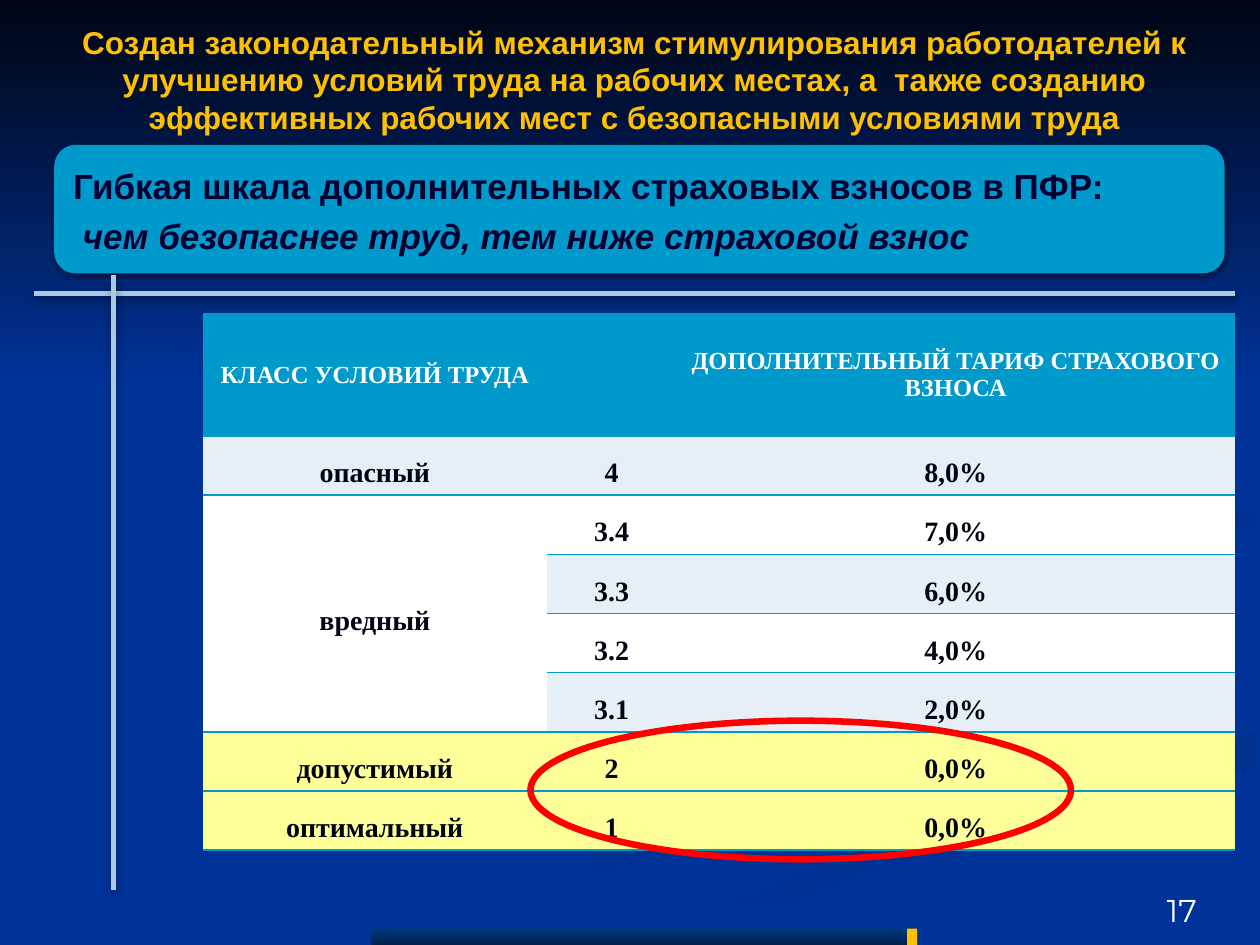
from lxml import etree
from pptx import Presentation
from pptx.dml.color import RGBColor
from pptx.enum.shapes import MSO_CONNECTOR, MSO_SHAPE
from pptx.enum.text import MSO_ANCHOR, PP_ALIGN
from pptx.oxml.ns import qn
from pptx.util import Emu, Inches, Pt

STRAIGHT = MSO_CONNECTOR.STRAIGHT
RECT, ROUNDED, OVAL = MSO_SHAPE.RECTANGLE, MSO_SHAPE.ROUNDED_RECTANGLE, MSO_SHAPE.OVAL
CENTER, LEFT = PP_ALIGN.CENTER, PP_ALIGN.LEFT
TOP, MIDDLE, BOTTOM = MSO_ANCHOR.TOP, MSO_ANCHOR.MIDDLE, MSO_ANCHOR.BOTTOM

WIDTH, HEIGHT = 10, 7.5
THEME = {
    "background": "003399", "night": "000514", "banner": "0099CC", "accent": "FFC000",
    "rule": "AACAE2", "ring": "FF0000", "band": "E7EFF6", "plain": "FFFFFF", "safe": "FFFF99",
    "title": dict(size=Pt(18), name="Arial", bold=True, color="FFC000"),
    "message": dict(size=Pt(20), name="Arial", bold=True, color="000030"),
    "header": dict(size=Pt(14), name="Times New Roman", bold=True, color="FFFFFF"),
    "body": dict(size=Pt(16), name="Times New Roman", bold=True, color="000514"),
    "number": dict(size=Pt(18), name="Montserrat", color="FFFFFF"),
}

TITLE = ("Создан законодательный механизм стимулирования работодателей к улучшению условий "
         "труда на рабочих местах, а  также созданию эффективных рабочих мест с безопасными "
         "условиями труда")
MESSAGE = [("Гибкая шкала дополнительных страховых взносов в ПФР:", False),
           (" чем безопаснее труд, тем ниже страховой взнос", True)]
PAGE = "17"
HEADER = ("КЛАСС УСЛОВИЙ ТРУДА", "", "ДОПОЛНИТЕЛЬНЫЙ ТАРИФ СТРАХОВОГО ВЗНОСА")
RATES = [  # class of conditions, [(subclass, rate, row tint)]
    ("опасный", [("4", "8,0%", "band")]),
    ("вредный", [("3.4", "7,0%", "plain"), ("3.3", "6,0%", "band"),
                 ("3.2", "4,0%", "plain"), ("3.1", "2,0%", "band")]),
    ("допустимый", [("2", "0,0%", "safe")]),
    ("оптимальный", [("1", "0,0%", "safe")]),
]
COLUMN_WIDTHS = (2.73, 1.03, 4.43)
HEADER_HEIGHT, ROW_HEIGHT = 0.97, 0.47

# Background ribbons: start colour, end colour, clockwise angle, outline
RIBBONS = [
    ("003399", "003193", 0,
     [(7.81, 5.53), (7.45, 5.38), (6.82, 5.19), (6.26, 5.02), (5.94, 4.85), (5.75, 4.66),
      (5.75, 4.59), (5.7, 4.72), (5.86, 4.87), (6.31, 5.05), (7.14, 5.3), (7.7, 5.51),
      (7.86, 5.66), (7.74, 5.83), (7.39, 5.98), (6.84, 6.13), (5.79, 6.39), (4.58, 6.74),
      (3.76, 7.07), (3, 7.49), (3.61, 7.49), (4.31, 7.14), (5.32, 6.74), (6.51, 6.4),
      (7.56, 6.14), (7.91, 5.97), (8, 5.81), (7.92, 5.61)]),
    ("003399", "003193", 45,
     [(9.43, 5.7), (9.3, 5.53), (8.88, 5.35), (8.11, 5.15), (7.58, 4.98), (7.3, 4.79),
      (7.24, 4.64), (7.3, 4.84), (7.55, 5.05), (8.15, 5.3), (8.8, 5.49), (9.11, 5.67),
      (9.18, 5.81), (9.07, 5.97), (8.94, 6.05), (9.25, 5.93), (9.41, 5.81)]),
    ("002F8C", "003399", 90,
     [(5.19, 7.47), (5.03, 7.49), (5.71, 7.49), (6.14, 7.26), (6.7, 7.02), (7.52, 6.72),
      (8.61, 6.4), (9.98, 6.09), (9.98, 5.81), (9.63, 5.94), (9.03, 6.1), (7.97, 6.38),
      (6.96, 6.69), (6.3, 6.93), (5.69, 7.19)]),
    ("003091", "003399", 45,
     [(7.81, 4.6), (7.86, 4.74), (8.06, 4.87), (8.26, 4.96), (8.09, 4.84), (8.05, 4.72),
      (8.16, 4.59), (8.59, 4.43), (9.36, 4.29), (9.98, 4.2), (9.98, 4.02), (9.33, 4.15),
      (8.65, 4.24), (8.1, 4.37)]),
    ("002F8E", "003399", 45,
     [(6.83, 4.3), (7.64, 4.17), (8.25, 4.02), (8.67, 3.84), (8.89, 3.62), (8.93, 3.35),
      (8.73, 2.99), (8.43, 2.75), (7.99, 2.5), (7.62, 2.33), (8.26, 2.66), (8.7, 2.99),
      (8.89, 3.35), (8.76, 3.6), (8.42, 3.78), (7.63, 3.98), (6.49, 4.2), (5.97, 4.37),
      (5.77, 4.62), (5.9, 4.84), (6.22, 5), (5.97, 4.8), (5.94, 4.65), (6.14, 4.48)]),
]


def inches(*values):
    return [Inches(v) for v in values]


def set_gradient(shape, colors, clockwise, opacities=()):
    shape.shadow.inherit = False
    shape.line.fill.background()
    shape.fill.gradient()
    shape.fill.gradient_angle = (360 - clockwise) % 360
    for stop, color in zip(shape.fill.gradient_stops, colors):
        stop.color.rgb = RGBColor.from_string(color)
    tints = shape.fill._xPr.iter(qn("a:srgbClr"))
    for tint, opacity in zip(tints, opacities):
        etree.SubElement(tint, qn("a:alpha"), val=str(opacity * 1000))


def set_shadow(properties, opacity, blur, distance):
    """Put a downward black shadow on an spPr element."""
    effects = properties.find(qn("a:effectLst"))
    if effects is None:
        effects = etree.SubElement(properties, qn("a:effectLst"))
    outer = etree.SubElement(effects, qn("a:outerShdw"), blurRad=str(Pt(blur)),
                             dist=str(Pt(distance)), dir="5400000", rotWithShape="0")
    black = etree.SubElement(outer, qn("a:srgbClr"), val="000000")
    etree.SubElement(black, qn("a:alpha"), val=str(opacity * 1000))


def add_block(shapes, kind, box, fill=None):
    block = shapes.add_shape(kind, *inches(*box))
    block.shadow.inherit = False
    block.line.fill.background()
    if fill:
        block.fill.solid()
        block.fill.fore_color.rgb = RGBColor.from_string(THEME[fill])
    else:
        block.fill.background()
    return block


def write(paragraph, text, style, italic=False, **layout):
    for key, value in layout.items():
        setattr(paragraph, key, value)
    run = paragraph.add_run()
    run.text = text
    for key, value in THEME[style].items():
        if key == "color":
            run.font.color.rgb = RGBColor.from_string(value)
        else:
            setattr(run.font, key, value)
    if italic:
        run.font.italic = True


def add_frame(shapes, box, anchor):
    frame = shapes.add_textbox(*inches(*box)).text_frame
    frame.word_wrap = True
    frame.vertical_anchor = anchor
    return frame


def fill_cell(cell, text, style, tint, spacing):
    cell.fill.solid()
    cell.fill.fore_color.rgb = RGBColor.from_string(THEME[tint])
    cell.vertical_anchor = MIDDLE
    cell.margin_left = cell.margin_right = Inches(0.07)
    cell.margin_top = cell.margin_bottom = 0
    if text:
        write(cell.text_frame.paragraphs[0], text, style, alignment=CENTER, line_spacing=spacing)
    for edge in ("a:lnB", "a:lnT"):
        border = etree.Element(qn(edge), w=str(Pt(1)))
        solid = etree.SubElement(border, qn("a:solidFill"))
        etree.SubElement(solid, qn("a:srgbClr"), val=THEME["banner"])
        cell._tc.get_or_add_tcPr().insert(0, border)


def add_rates(shapes):
    row_count = 1 + sum(len(levels) for _, levels in RATES)
    height = HEADER_HEIGHT + ROW_HEIGHT * (row_count - 1)
    table = shapes.add_table(row_count, len(COLUMN_WIDTHS),
                             *inches(1.61, 2.49, sum(COLUMN_WIDTHS), height)).table
    no_style = "{2D5ABB26-0587-4C30-8999-92F81FD0307C}"
    table._tbl.tblPr.find(qn("a:tableStyleId")).text = no_style
    for column, width in zip(table.columns, COLUMN_WIDTHS):
        column.width = Inches(width)
    for index, row in enumerate(table.rows):
        row.height = Inches(ROW_HEIGHT if index else HEADER_HEIGHT)
    for column, text in enumerate(HEADER):
        fill_cell(table.cell(0, column), text, "header", "banner", 1.0)
    row = 1
    for condition, levels in RATES:
        first = table.cell(row, 0)
        if len(levels) > 1:
            first.merge(table.cell(row + len(levels) - 1, 0))
        fill_cell(first, condition, "body", levels[0][2], 1.5)
        for level, rate, tint in levels:
            fill_cell(table.cell(row, 1), level, "body", tint, 1.5)
            fill_cell(table.cell(row, 2), rate, "body", tint, 1.5)
            row += 1


def main():
    deck = Presentation()
    deck.slide_width, deck.slide_height = inches(WIDTH, HEIGHT)
    slide = deck.slides.add_slide(deck.slide_layouts[6])
    slide.background.fill.solid()
    slide.background.fill.fore_color.rgb = RGBColor.from_string(THEME["background"])
    shapes = slide.shapes

    for start, end, angle, outline in RIBBONS:
        points = [inches(*point) for point in outline]
        builder = shapes.build_freeform(*points[0], scale=1.0)
        builder.add_line_segments(points[1:], close=True)
        set_gradient(builder.convert_to_shape(Emu(0), Emu(0)), (start, end), angle)
    sky = add_block(shapes, RECT, (0, 0, WIDTH, 3.08))
    set_gradient(sky, (THEME["night"], THEME["background"]), 90)
    footer = add_block(shapes, RECT, (2.95, 7.37, 4.3, 0.13))
    set_gradient(footer, ("003C73", "001C35"), 90, (60, 80))
    add_block(shapes, RECT, (7.2, 7.37, 0.08, 0.13), "accent")

    banner = shapes.add_group_shape().shapes
    panel = add_block(banner, ROUNDED, (0.43, 1.15, 9.29, 1.02), "banner")
    set_shadow(panel._element.spPr, 38, 3.1, 1.6)
    message = add_frame(banner, (0.5, 1.22, 8.83, 0.95), MIDDLE)
    for side in ("left", "top", "right", "bottom"):
        setattr(message, f"margin_{side}", Inches(0.08))
    for index, (text, italic) in enumerate(MESSAGE):
        paragraph = message.add_paragraph() if index else message.paragraphs[0]
        write(paragraph, text, "message", italic,
              alignment=LEFT, line_spacing=0.9, space_after=Pt(7))

    add_rates(shapes)
    for ends in ((0.27, 2.33, 9.8, 2.33), (0.9, 2.18, 0.9, 7.06)):
        rule = shapes.add_connector(STRAIGHT, *inches(*ends))
        rule.line.width = Pt(3)
        rule.line.color.rgb = RGBColor.from_string(THEME["rule"])
        set_shadow(rule._element.spPr, 35, 5, 1.8)

    title = add_frame(shapes, (0.35, 0.13, 9.37, 1.01), TOP)
    write(title.paragraphs[0], TITLE, "title", alignment=CENTER)
    ring = add_block(shapes, OVAL, (4.21, 5.72, 4.29, 1.1))
    ring.line.width = Pt(3.75)
    ring.line.color.rgb = RGBColor.from_string(THEME["ring"])
    page = add_frame(shapes, (8.94, 6.9, 0.88, 0.52), BOTTOM)
    write(page.paragraphs[0], PAGE, "number", alignment=CENTER)

    deck.save("out.pptx")


if __name__ == "__main__":
    main()
